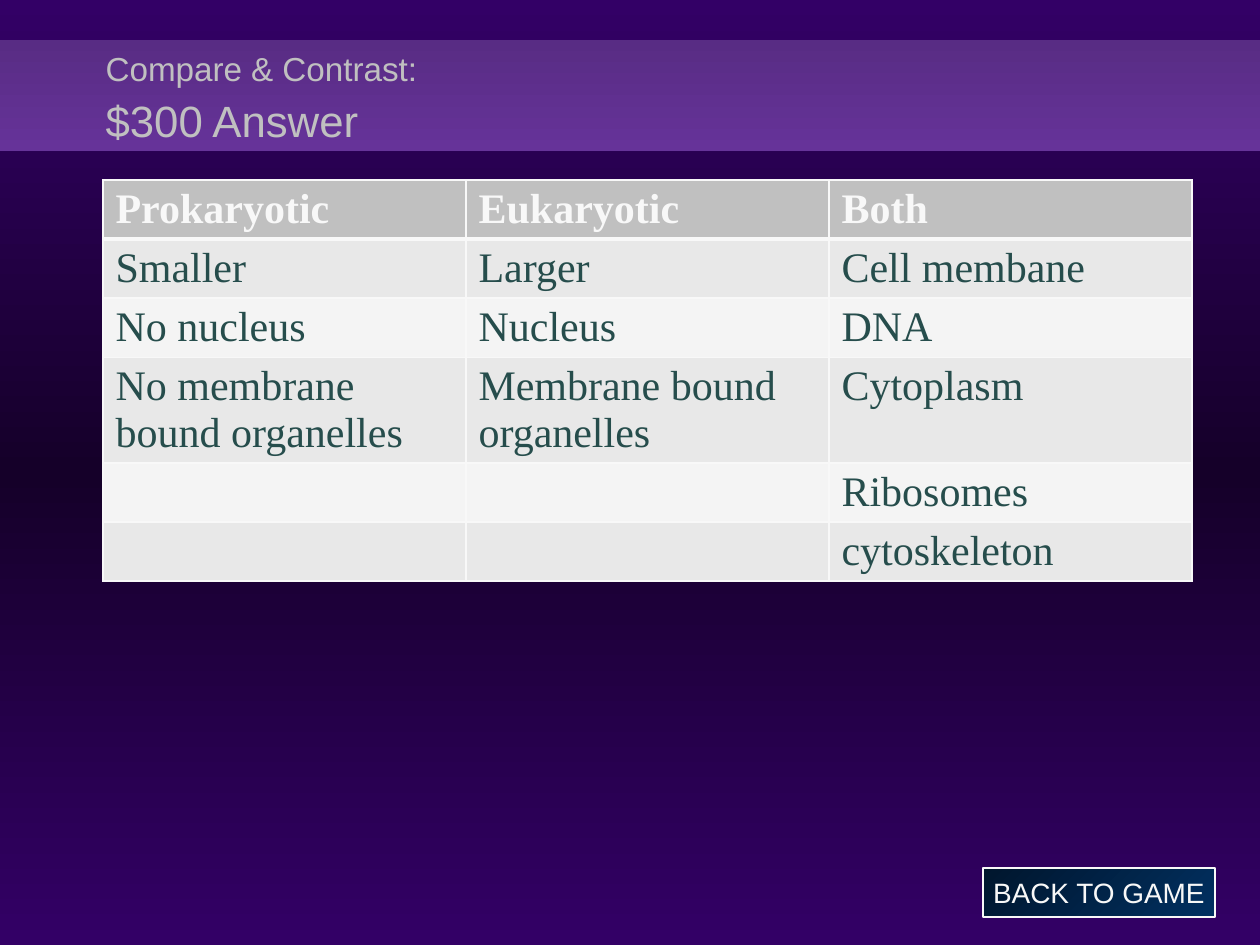
from copy import deepcopy

from lxml import etree
from pptx import Presentation
from pptx import util as u
from pptx.dml.color import RGBColor
from pptx.enum import shapes, text
from pptx.oxml.ns import qn

PX = 914400 / 126
WIDTH, HEIGHT = 1260, 945

BACKGROUND = ["330066", "150029", "330066"]
BAND = {"at": (0, 40, WIDTH, 111), "colors": ["582C84", "663399"], "angle": 90}
BUTTON = {"at": (983, 868, 232, 49), "colors": ["00162D", "013061"], "angle": 45}
BUTTON_LABEL = "BACK TO GAME"
TITLE_AT = (93, 39, 1144, 112)
TITLE_LINES = [("Compare & Contrast:", 19), ("$300 Answer", 25)]
TABLE_AT = (103, 180, 1089, 344)
ROWS = [
    ("Prokaryotic", "Eukaryotic", "Both"),
    ("Smaller", "Larger", "Cell membane"),
    ("No nucleus", "Nucleus", "DNA"),
    ("No membrane bound organelles", "Membrane bound organelles", "Cytoplasm"),
    ("", "", "Ribosomes"),
    ("", "", "cytoskeleton"),
]
SILVER, WHITE, TEAL = "C0C0C0", "F8F8F8", "264D4C"
BODY_FILLS = ["F4F4F4", "E8E8E8"]


def rgb(value):
    return RGBColor.from_string(value)


def emu(lengths):
    return [round(length * PX) for length in lengths]


def set_all(target, values):
    for name, value in values.items():
        setattr(target, name, value)


def style_font(font, color, **values):
    set_all(font, values)
    font.color.rgb = rgb(color)


def paint_gradient(fill, colors, angle):
    """Fill with two colours; the angle runs clockwise."""
    fill.gradient()
    fill.gradient_angle = 360 - angle
    for stop, color in zip(fill.gradient_stops, colors):
        stop.color.rgb = rgb(color)


def paint_background(page):
    start, middle, end = BACKGROUND
    paint_gradient(page.background.fill, [start, end], 90)
    stops = page.element.find(".//" + qn("a:gsLst"))
    center = deepcopy(stops[0])
    center.set("pos", "50000")
    center[0].set("val", middle)
    stops.insert(1, center)


def add_bar(page, at, colors, angle):
    bar = page.shapes.add_shape(shapes.MSO_SHAPE.RECTANGLE, *emu(at))
    bar.shadow.inherit = False
    paint_gradient(bar.fill, colors, angle)
    bar.line.fill.background()
    return bar


def add_title(page):
    title = page.shapes.title
    set_all(title, dict(zip(("left", "top", "width", "height"), emu(TITLE_AT))))
    set_all(title.text_frame, {
        "vertical_anchor": text.MSO_ANCHOR.MIDDLE,
        "auto_size": text.MSO_AUTO_SIZE.NONE,
        "word_wrap": True,
    })
    para = title.text_frame.paragraphs[0]
    set_all(para, {"alignment": text.PP_ALIGN.LEFT, "line_spacing": 1.1})
    for index, (line, size) in enumerate(TITLE_LINES):
        if index:
            para.add_line_break()
        span = para.add_run()
        span.text = line
        style_font(span.font, SILVER, name="Arial", size=u.Pt(size))
    return title


def add_button(page):
    button = add_bar(page, **BUTTON)
    button.line.color.rgb = rgb(WHITE)
    button.line.width = u.Pt(0.75)
    frame = button.text_frame
    set_all(frame, {"word_wrap": False, "vertical_anchor": text.MSO_ANCHOR.MIDDLE})
    para = frame.paragraphs[0]
    para.alignment = text.PP_ALIGN.CENTER
    span = para.add_run()
    span.text = BUTTON_LABEL
    style_font(span.font, WHITE, name="Arial", size=u.Pt(16))


def add_borders(cell, widths):
    """Draw cell edges; they must precede the fill in the cell properties."""
    properties = cell._tc.get_or_add_tcPr()
    for index, (side, width) in enumerate(widths.items()):
        edge = etree.Element(qn("a:ln" + side), w=str(u.Pt(width)))
        solid = etree.SubElement(edge, qn("a:solidFill"))
        etree.SubElement(solid, qn("a:srgbClr"), val=WHITE)
        properties.insert(index, edge)


def add_comparison(page):
    frame = page.shapes.add_table(len(ROWS), len(ROWS[0]), *emu(TABLE_AT))
    for r, row in enumerate(ROWS):
        header = r == 0
        for c, words in enumerate(row):
            cell = frame.table.cell(r, c)
            cell.fill.solid()
            cell.fill.fore_color.rgb = rgb(SILVER if header else BODY_FILLS[r % 2])
            add_borders(cell, {"L": 1, "R": 1, "T": 3 if r == 1 else 1,
                               "B": 3 if header else 1})
            cell.text = words
            style_font(cell.text_frame.paragraphs[0].font, WHITE if header else TEAL,
                       name="Times New Roman", size=u.Pt(24), bold=header)


def main():
    deck = Presentation()
    deck.slide_width, deck.slide_height = emu((WIDTH, HEIGHT))
    page = deck.slides.add_slide(deck.slide_layouts[5])
    paint_background(page)
    title = add_title(page)
    band = add_bar(page, **BAND)
    title.element.addprevious(band.element)
    add_button(page)
    add_comparison(page)
    deck.save("out.pptx")


if __name__ == "__main__":
    main()
